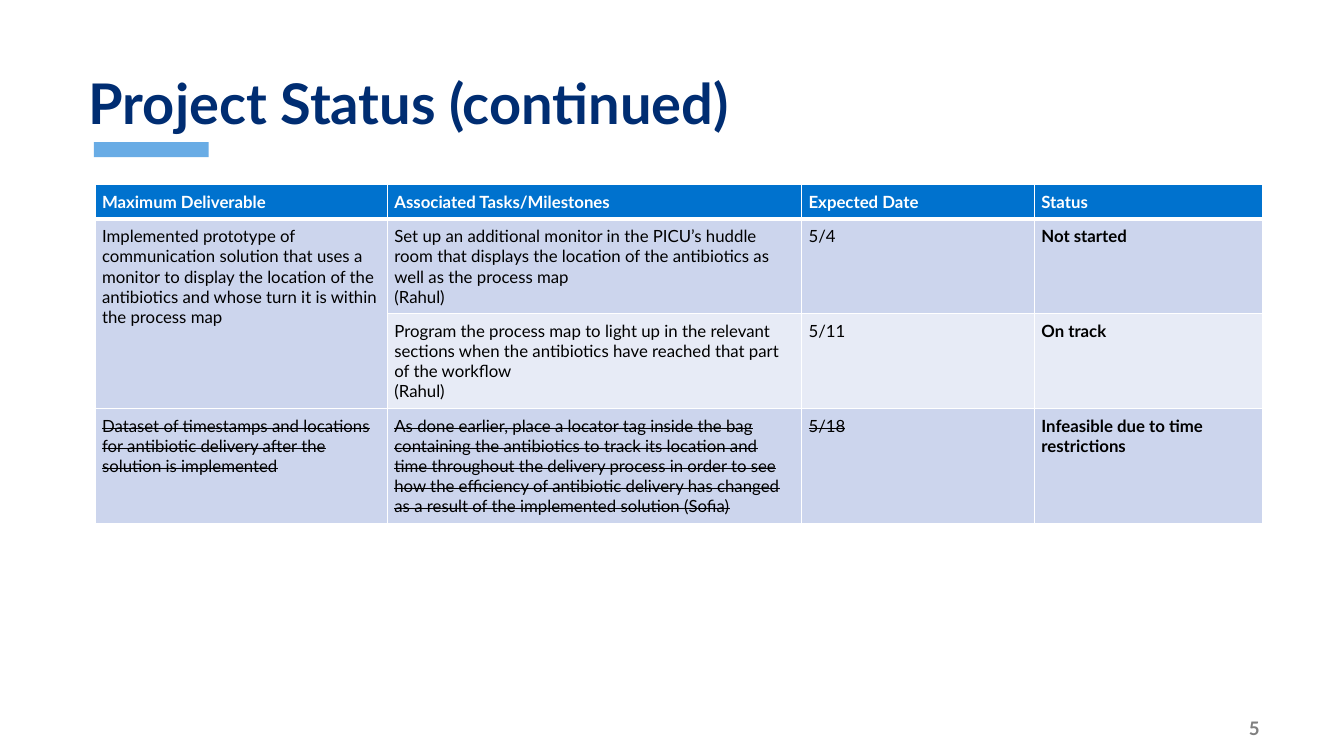
from dataclasses import dataclass

import pptx
import pptx.dml.color
import pptx.enum.shapes
import pptx.enum.text
import pptx.oxml
import pptx.oxml.ns
import pptx.presentation
import pptx.slide
import pptx.table
import pptx.text.text
import pptx.util

Pt = pptx.util.Pt
RGBColor = pptx.dml.color.RGBColor
Anchor = pptx.enum.text.MSO_ANCHOR

NAVY = RGBColor(0x00, 0x2D, 0x72)
BLUE = RGBColor(0x00, 0x72, 0xCE)
SKY = RGBColor(0x69, 0xAC, 0xE5)
BAND_DARK = RGBColor(0xCC, 0xD5, 0xED)
BAND_LIGHT = RGBColor(0xE7, 0xEB, 0xF6)
GRAY = RGBColor(0x80, 0x80, 0x80)
WHITE = RGBColor(0xFF, 0xFF, 0xFF)
BLACK = RGBColor(0x00, 0x00, 0x00)

FONT_NAME = "Lato"
CELL_INSET = 5.04
LINE_HEIGHT = 14.4
COLUMN_WIDTHS = (208.8, 295.9, 166.3, 162.7)
HEADINGS = ("Maximum Deliverable", "Associated Tasks/Milestones", "Expected Date", "Status")


@dataclass(frozen=True)
class Milestone:
    deliverable: str
    task: str
    date: str
    status: str
    lines: int
    fill: RGBColor
    dropped: bool = False


MILESTONES = (
    Milestone(
        "Implemented prototype of communication solution that uses a monitor to display "
        "the location of the antibiotics and whose turn it is within the process map",
        "Set up an additional monitor in the PICU’s huddle room that displays the location "
        "of the antibiotics as well as the process map\n(Rahul)",
        "5/4", "Not started", 4, BAND_DARK,
    ),
    Milestone(
        "",
        "Program the process map to light up in the relevant sections when the antibiotics "
        "have reached that part of the workflow\n(Rahul)",
        "5/11", "On track", 4, BAND_LIGHT,
    ),
    Milestone(
        "Dataset of timestamps and locations for antibiotic delivery after the solution is implemented",
        "As done earlier, place a locator tag inside the bag containing the antibiotics to track "
        "its location and time throughout the delivery process in order to see how the efficiency "
        "of antibiotic delivery has changed as a result of the implemented solution (Sofia)",
        "5/18", "Infeasible due to time restrictions", 5, BAND_DARK, True,
    ),
)


def format_paragraph(para: pptx.text.text._Paragraph, size: float, color: RGBColor, bold: bool) -> None:
    para.font.name = FONT_NAME
    para.font.size = Pt(size)
    para.font.bold = bold
    para.font.color.rgb = color


def set_borders(cell: pptx.table._Cell, top: float, bottom: float) -> None:
    properties = cell._tc.get_or_add_tcPr()
    widths = {"lnL": 1, "lnR": 1, "lnT": top, "lnB": bottom}
    for position, (tag, width) in enumerate(widths.items()):
        line = pptx.oxml.parse_xml(
            f'<a:{tag} {pptx.oxml.ns.nsdecls("a")} w="{Pt(width)}">'
            f'<a:solidFill><a:srgbClr val="{WHITE}"/></a:solidFill></a:{tag}>'
        )
        properties.insert(position, line)


def fill_cell(cell: pptx.table._Cell, text: str, fill: RGBColor, color: RGBColor,
              bold: bool, strike: bool = False) -> None:
    cell.margin_left = cell.margin_right = Pt(CELL_INSET)
    cell.margin_top = cell.margin_bottom = Pt(CELL_INSET)
    cell.fill.solid()
    cell.fill.fore_color.rgb = fill
    cell.text = text
    for para in cell.text_frame.paragraphs:
        format_paragraph(para, 12, color, bold)
        if strike:
            for span in para.runs:
                span._r.get_or_add_rPr().set("strike", "sngStrike")


def add_title(page: pptx.slide.Slide) -> None:
    title = page.shapes.title
    title.left, title.top, title.width, title.height = Pt(56.2), Pt(11.5), Pt(856), Pt(90)
    frame = title.text_frame
    frame.text = "Project Status (continued)"
    frame.vertical_anchor = Anchor.BOTTOM
    frame.auto_size = pptx.enum.text.MSO_AUTO_SIZE.NONE
    para = frame.paragraphs[0]
    para.alignment = pptx.enum.text.PP_ALIGN.LEFT
    para.line_spacing = 0.9
    format_paragraph(para, 40, NAVY, True)


def add_accent(page: pptx.slide.Slide) -> None:
    accent = page.shapes.add_shape(
        pptx.enum.shapes.MSO_SHAPE.RECTANGLE, Pt(67), Pt(101.5), Pt(82), Pt(10.8)
    )
    accent.shadow.inherit = False
    accent.fill.solid()
    accent.fill.fore_color.rgb = SKY
    accent.line.fill.background()


def add_page_number(page: pptx.slide.Slide) -> None:
    box = page.shapes.add_textbox(Pt(828.7), Pt(510.5), Pt(83.5), Pt(18.7))
    frame = box.text_frame
    frame.word_wrap = True
    frame.vertical_anchor = Anchor.MIDDLE
    frame.margin_top = frame.margin_bottom = Pt(0)
    frame.margin_right = Pt(12.5)
    frame.text = "5"
    para = frame.paragraphs[0]
    para.alignment = pptx.enum.text.PP_ALIGN.RIGHT
    format_paragraph(para, 13.3, GRAY, True)


def add_status_table(page: pptx.slide.Slide) -> None:
    line_counts = [1] + [milestone.lines for milestone in MILESTONES]
    heights = [count * LINE_HEIGHT + 2 * CELL_INSET for count in line_counts]
    table = page.shapes.add_table(
        len(heights), len(COLUMN_WIDTHS), Pt(67.9), Pt(132), Pt(sum(COLUMN_WIDTHS)), Pt(sum(heights))
    ).table
    for column, width in zip(table.columns, COLUMN_WIDTHS):
        column.width = Pt(width)
    for row, height in zip(table.rows, heights):
        row.height = Pt(height)

    for column, heading in enumerate(HEADINGS):
        fill_cell(table.cell(0, column), heading, BLUE, WHITE, True)
    for row, milestone in enumerate(MILESTONES, start=1):
        texts = (milestone.deliverable, milestone.task, milestone.date, milestone.status)
        for column, text in enumerate(texts):
            is_status = column == len(texts) - 1
            fill_cell(table.cell(row, column), text, milestone.fill, BLACK,
                      is_status, milestone.dropped and not is_status)
    for row in range(len(heights)):
        for column in range(len(COLUMN_WIDTHS)):
            set_borders(table.cell(row, column), 3 if row == 1 else 1, 3 if row == 0 else 1)
    table.cell(1, 0).merge(table.cell(2, 0))


def main() -> None:
    deck = pptx.Presentation()
    deck.slide_width, deck.slide_height = Pt(960), Pt(540)
    page = deck.slides.add_slide(deck.slide_layouts[5])
    add_accent(page)
    add_page_number(page)
    add_title(page)
    add_status_table(page)
    deck.save("out.pptx")


if __name__ == "__main__":
    main()
